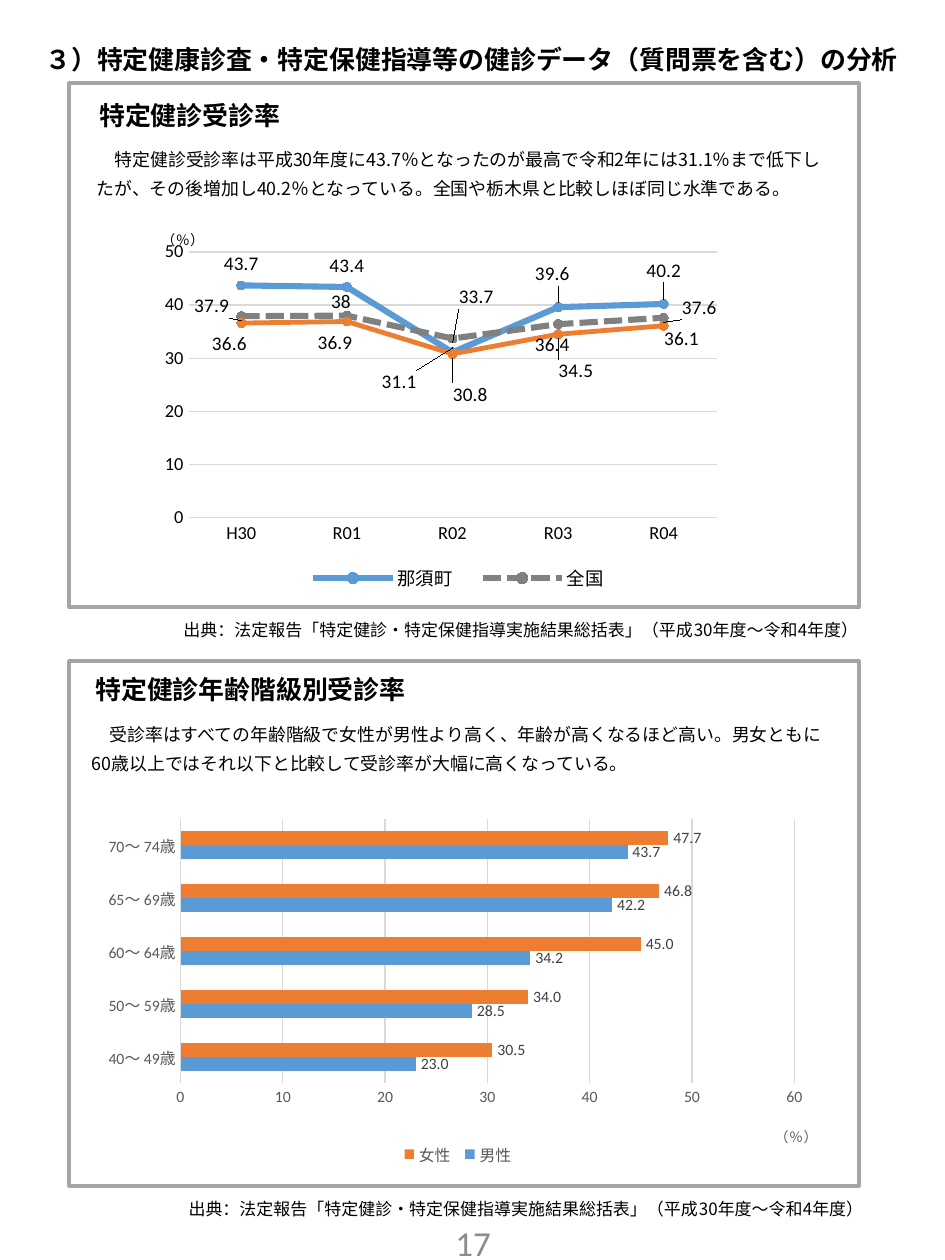
import pptx
import pptx.util
import pptx.chart.data
import pptx.dml.color
import pptx.enum.chart
import pptx.enum.dml
import pptx.enum.shapes
import pptx.enum.text
import pptx.oxml
import pptx.oxml.ns
from lxml import etree

Pt = pptx.util.Pt
RGB = pptx.dml.color.RGBColor
kinds = pptx.enum.chart
align = pptx.enum.text.PP_ALIGN
qn = pptx.oxml.ns.qn

BLACK = RGB(0x00, 0x00, 0x00)
DARK = RGB(0x40, 0x40, 0x40)
TEXT = RGB(0x59, 0x59, 0x59)
GREY = RGB(0x80, 0x80, 0x80)
PAGE = RGB(0x8C, 0x8C, 0x8C)
FRAME = RGB(0xA5, 0xA5, 0xA5)
SILVER = RGB(0xA6, 0xA6, 0xA6)
GRID = RGB(0xD9, 0xD9, 0xD9)
BLUE = RGB(0x5B, 0x9B, 0xD5)
ORANGE = RGB(0xED, 0x7D, 0x31)
GOTHIC = "Noto Sans CJK JP"

deck = pptx.Presentation()
deck.slide_width = pptx.util.Inches(7.5)
deck.slide_height = pptx.util.Inches(10)
col = deck.slide_width / 100
row = deck.slide_height / 100
slide = deck.slides.add_slide(deck.slide_layouts[5])


def write(text, area, size, box=None, bold=False, side=align.LEFT,
          wrap=True, face=GOTHIC, color=BLACK, lead=None):
    """Put one paragraph in a box; area is in columns and rows."""
    box = box or slide.shapes.add_textbox(0, 0, 0, 0)
    box.left, box.width = int(area[0] * col), int(area[2] * col)
    box.top, box.height = int(area[1] * row), int(area[3] * row)
    frame = box.text_frame
    frame.word_wrap = wrap
    frame.auto_size = pptx.enum.text.MSO_AUTO_SIZE.NONE
    frame.vertical_anchor = pptx.enum.text.MSO_ANCHOR.TOP
    par = frame.paragraphs[0]
    par.text = text
    par.alignment = side
    if lead:
        par.line_spacing = Pt(lead)
    font = par.font
    font.size, font.bold, font.name = Pt(size), bold, face
    font.color.rgb = color
    for props in par._p.xpath("./a:pPr/a:defRPr"):
        etree.SubElement(props, qn("a:ea")).set("typeface", face)
    return frame


def place(part, x, y, w=None, h=None, inner=False):
    """Give a chart part a manual layout in shares of the chart."""
    for old in part.xpath("./c:layout"):
        part.remove(old)
    outer = etree.Element(qn("c:layout"))
    manual = etree.SubElement(outer, qn("c:manualLayout"))
    rules = [("layoutTarget", "inner")] if inner else []
    if part.tag != qn("c:dLbl"):
        rules += [("xMode", "edge"), ("yMode", "edge")]
    rules += [("x", x), ("y", y)]
    if w:
        rules += [("w", w), ("h", h)]
    for name, value in rules:
        etree.SubElement(manual, qn("c:" + name)).set("val", str(value))
    ahead = part.xpath("./c:tx | ./c:idx | ./c:legendPos | ./c:legendEntry")
    part.insert(len(ahead), outer)


# Slide title
write("３）特定健康診査・特定保健指導等の健診データ（質問票を含む）の分析",
      (3.47, 3, 96.53, 3.5), 14.8, slide.shapes.title, True, wrap=False)

# Two framed panels: top, head spot, body spot, source left edge, words
panels = [
    (6.6, (9.2, 0.8, 22), (8.93, 4.1, 80.13), 5.73, "特定健診受診率",
     "　特定健診受診率は平成30年度に43.7％となったのが最高で令和2年には31.1％まで低下したが、"
     "その後増加し40.2％となっている。全国や栃木県と比較しほぼ同じ水準である。"),
    (52.5, (8.8, 0.5, 38.53), (8.4, 3.8, 80.8), 6.27, "特定健診年齢階級別受診率",
     "　受診率はすべての年齢階級で女性が男性より高く、年齢が高くなるほど高い。"
     "男女ともに60歳以上ではそれ以下と比較して受診率が大幅に高くなっている。"),
]
for top, spot, room, edge, head, body in panels:
    frame = slide.shapes.add_shape(
        pptx.enum.shapes.MSO_SHAPE.RECTANGLE, int(7.33 * col),
        int(top * row), int(83.6 * col), int(41.6 * row))
    frame.shadow.inherit = False
    frame.fill.background()
    frame.line.color.rgb = FRAME
    frame.line.width = Pt(2.25)
    write(head, (spot[0], top + spot[1], spot[2], 3.5), 14.8,
          bold=True, wrap=False)
    write(body, (room[0], top + room[1], room[2], 5.8), 10.2, lead=16.6)
    write("出典：法定報告「特定健診・特定保健指導実施結果総括表」（平成30年度～令和4年度）",
          (edge, top + 42.1, 86.4, 2.6), 9.7, side=align.RIGHT)

# Page number
page = write("17", (38.8, 96, 22.53, 5.3), 20, side=align.CENTER,
             face="Calibri", color=PAGE)
page.vertical_anchor = pptx.enum.text.MSO_ANCHOR.MIDDLE

# Chart data
years = pptx.chart.data.CategoryChartData()
years.categories = ["H30", "R01", "R02", "R03", "R04"]
years.add_series("那須町", [43.7, 43.4, 31.1, 39.6, 40.2])
years.add_series("全国", [37.9, 38, 33.7, 36.4, 37.6])
years.add_series("栃木県", [36.6, 36.9, 30.8, 34.5, 36.1])
ages = pptx.chart.data.CategoryChartData()
ages.categories = ["40～ 49歳", "50～ 59歳", "60～ 64歳", "65～ 69歳", "70～ 74歳"]
ages.add_series("男性", [23.0, 28.5, 34.2, 42.2, 43.7])
ages.add_series("女性", [30.5, 34, 45, 46.8, 47.7])

# Kind, data, area, plot, legend, unit spot, top of scale, size, colour
plans = [
    (kinds.XL_CHART_TYPE.LINE_MARKERS, years, (14.93, 16.9, 62.8, 31),
     (0.08, 0.1, 0.89, 0.68), (0.25, 0.89, 0.57, 0.09), (0.03, 0.03),
     50, 10.5, BLACK),
    (kinds.XL_CHART_TYPE.BAR_CLUSTERED, ages, (8.93, 63.5, 78.27, 29.6),
     (0.13, 0.05, 0.83, 0.71), (0.42, 0.92, 0.17, 0.08), (0.93, 0.86),
     60, 9, TEXT),
]
charts = []
for kind, data, area, plot, key, unit, peak, size, color in plans:
    chart = slide.shapes.add_chart(
        kind, int(area[0] * col), int(area[1] * row),
        int(area[2] * col), int(area[3] * row), data).chart
    charts.append(chart)
    chart.has_title = False
    chart.font.size, chart.font.name = Pt(10), "Calibri"
    chart.font.color.rgb = BLACK
    place(chart._chartSpace.chart.plotArea, *plot, inner=True)

    # Axes
    cats, vals = chart.category_axis, chart.value_axis
    for axis in (cats, vals):
        axis.major_tick_mark = kinds.XL_TICK_MARK.NONE
        axis.minor_tick_mark = kinds.XL_TICK_MARK.NONE
        font = axis.tick_labels.font
        font.size, font.name = Pt(size), "Calibri"
        font.color.rgb = color
    cats.format.line.color.rgb = GRID
    cats.format.line.width = Pt(0.75)
    vals.format.line.fill.background()
    vals.minimum_scale, vals.maximum_scale = 0, peak
    vals.major_unit = 10
    vals.tick_labels.number_format = "General"
    vals.tick_labels.number_format_is_linked = False
    vals.has_major_gridlines = True
    vals.major_gridlines.format.line.color.rgb = GRID
    vals.major_gridlines.format.line.width = Pt(0.75)

    # Unit as the axis title
    title = vals.axis_title
    par = title.text_frame.paragraphs[0]
    par.text = "（％）"
    par.font.size, par.font.bold = Pt(8), False
    par.font.color.rgb = color
    for props in title._element.xpath(".//a:bodyPr"):
        props.set("rot", "0")
        props.set("vert", "horz")
    place(title._element, *unit)

    # Legend
    chart.has_legend = True
    legend = chart.legend
    legend.position = kinds.XL_LEGEND_POSITION.BOTTOM
    legend.include_in_layout = False
    legend.font.size = Pt(size)
    legend.font.color.rgb = color
    if len(chart.plots[0].series) == 3:
        entry = etree.Element(qn("c:legendEntry"))
        etree.SubElement(entry, qn("c:idx")).set("val", "2")
        etree.SubElement(entry, qn("c:delete")).set("val", "1")
        legend._element.insert(1, entry)
    place(legend._element, *key)

# Lines: colour, marker, width, label side, label shifts by point
spots = kinds.XL_LABEL_POSITION
looks = [
    (BLUE, BLUE, 3.5, spots.ABOVE,
     {2: (-0.09, 0.13), 3: (-0.01, -0.03), 4: (0, -0.03)}),
    (GREY, SILVER, 3.5, spots.BELOW,
     {0: (-0.05, -0.08), 1: (-0.01, -0.09), 2: (0.04, -0.16),
      3: (-0.01, 0), 4: (0.06, -0.08)}),
    (ORANGE, ORANGE, 2.75, spots.BELOW,
     {0: (-0.02, 0), 1: (-0.02, 0), 2: (0.03, 0.05),
      3: (0.03, 0.04), 4: (0.03, -0.02)}),
]
for line, (color, dot, width, side, shifts) in zip(charts[0].plots[0].series, looks):
    line.smooth = False
    line.format.line.color.rgb = color
    line.format.line.width = Pt(width)
    if color == GREY:
        line.format.line.dash_style = pptx.enum.dml.MSO_LINE.SQUARE_DOT
    line.marker.style = kinds.XL_MARKER_STYLE.CIRCLE
    line.marker.size = 5
    line.marker.format.fill.solid()
    line.marker.format.fill.fore_color.rgb = dot
    line.marker.format.line.color.rgb = color
    line.data_labels.show_value = True
    labels = [line.data_labels] + [line.points[i].data_label for i in shifts]
    for label in labels:
        label.position = side
        label.font.size, label.font.name = Pt(11), "Calibri"
        label.font.color.rgb = BLACK
    for label, shift in zip(line._element.xpath(".//c:dLbl"), shifts.values()):
        place(label, *shift)

# Bars
bars = charts[1].plots[0]
bars.gap_width, bars.overlap = 182, 0
bars.vary_by_categories = False
for bar, color in zip(bars.series, (BLUE, ORANGE)):
    bar.format.fill.solid()
    bar.format.fill.fore_color.rgb = color
    label = bar.data_labels
    label.show_value = True
    label.position = spots.OUTSIDE_END
    label.number_format, label.number_format_is_linked = "0.0", False
    label.font.size, label.font.name = Pt(9), "Calibri"
    label.font.color.rgb = DARK

deck.save("out.pptx")
